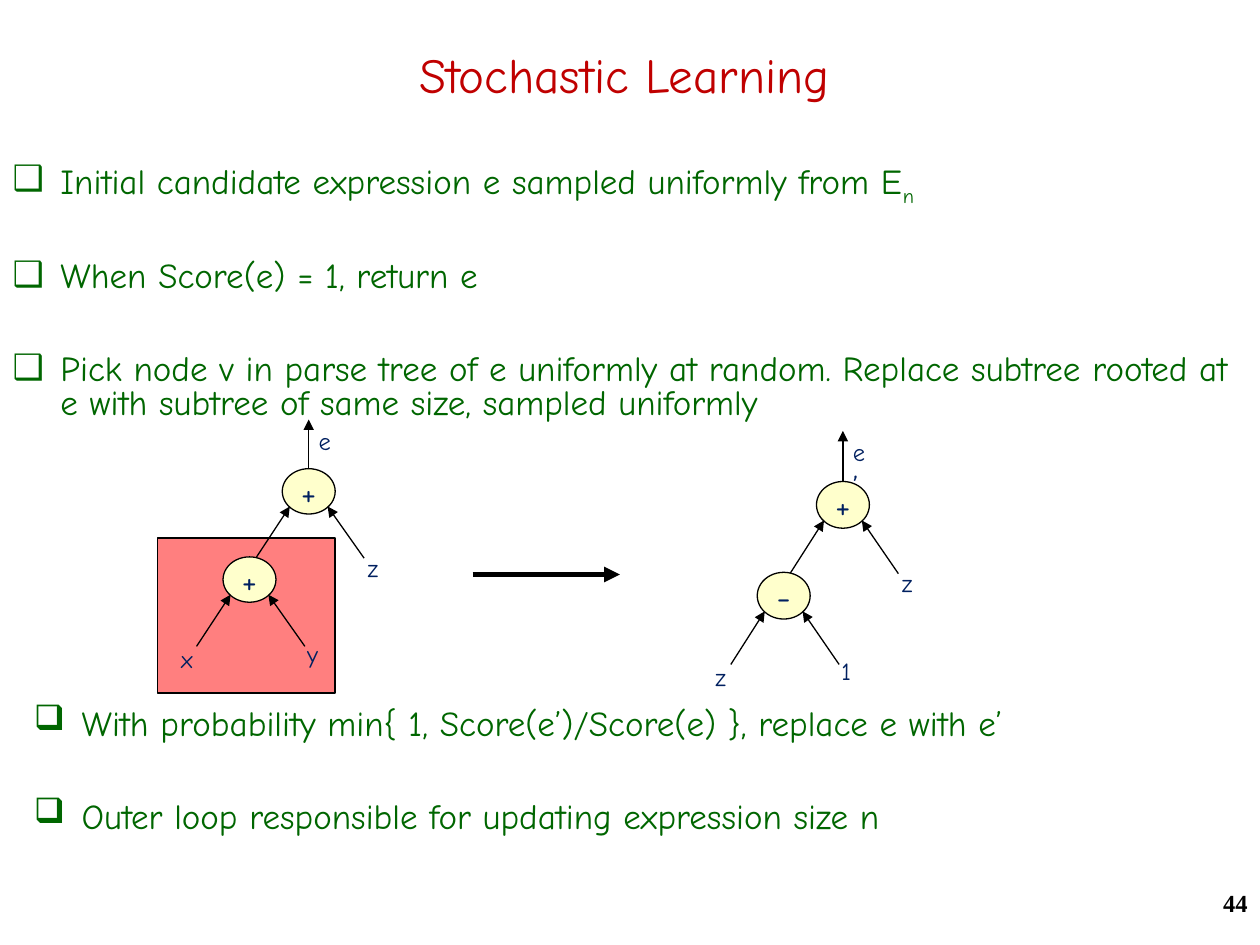
import pptx
import pptx.util
import pptx.dml.color
import pptx.enum.shapes
import pptx.enum.text
import pptx.oxml
import pptx.oxml.ns
import lxml.etree

Inches = pptx.util.Inches
Pt = pptx.util.Pt
SHAPE = pptx.enum.shapes.MSO_SHAPE
ALIGN = pptx.enum.text.PP_ALIGN
ANCHOR = pptx.enum.text.MSO_ANCHOR
FONT = "Comic Neue"
GREEN, NAVY, RED, BLACK = "006600", "002060", "C00000", "000000"


def rgb(value):
    """Return the colour for a hex string."""
    return pptx.dml.color.RGBColor.from_string(value)


def sub(parent, tag, **attrs):
    """Append a DrawingML child element and return it."""
    return lxml.etree.SubElement(parent, pptx.oxml.ns.qn(tag), attrs)


def add_run(p, text, size, color, font=FONT):
    """Add one formatted run to a paragraph."""
    r = p.add_run()
    r.text = text
    r.font.size = Pt(size)
    r.font.name = font
    r.font.color.rgb = rgb(color)
    return r


def place(sp, left, top, width, height):
    """Move and size a shape."""
    sp.left, sp.top = Inches(left), Inches(top)
    sp.width, sp.height = Inches(width), Inches(height)


def add_text(shapes, left, top, width, height):
    """Add a wrapping text box and return it."""
    sp = shapes.add_textbox(Inches(left), Inches(top), Inches(width), Inches(height))
    sp.text_frame.word_wrap = True
    return sp


def add_arrow(shapes, x1, y1, x2, y2, weight=0.75):
    """Add a black line with an arrowhead at its end."""
    line = shapes.add_connector(pptx.enum.shapes.MSO_CONNECTOR.STRAIGHT,
                                Inches(x1), Inches(y1), Inches(x2), Inches(y2))
    line.line.color.rgb = rgb(BLACK)
    line.line.width = Pt(weight)
    sub(line.line._get_or_add_ln(), "a:tailEnd", type="triangle")
    sub(line._element.spPr, "a:effectLst")


def add_outlined(shapes, kind, left, top, width, height, fill):
    """Add a filled shape with a thin black outline."""
    sp = shapes.add_shape(kind, Inches(left), Inches(top), Inches(width), Inches(height))
    sp.shadow.inherit = False
    sp.fill.solid()
    sp.fill.fore_color.rgb = rgb(fill)
    sp.line.color.rgb = rgb(BLACK)
    sp.line.width = Pt(0.75)
    return sp


def add_bullets(tf, items, first_gap):
    """Fill a text frame with bulleted items, each a list of (text, is_subscript)."""
    tf.word_wrap = True
    tf.auto_size = pptx.enum.text.MSO_AUTO_SIZE.NONE
    tf.vertical_anchor = ANCHOR.TOP
    for i, item in enumerate(items):
        p = tf.paragraphs[0] if i == 0 else tf.add_paragraph()
        p.line_spacing = 0.8
        p.space_before = Pt(34 if i else first_gap)
        pPr = p._p.get_or_add_pPr()
        pPr.set("marL", str(Inches(0.38)))
        pPr.set("indent", str(-Inches(0.38)))
        sub(sub(pPr, "a:buClr"), "a:srgbClr", val=GREEN)
        sub(pPr, "a:buChar", char="❑")
        for text, is_subscript in item:
            r = add_run(p, text, 20, GREEN)
            if is_subscript:
                r.font._element.set("baseline", "-25000")


def add_title(s):
    """Place and fill the title."""
    sp = s.shapes.title
    place(sp, 0.67, 0.25, 8.57, 0.67)
    sp.text_frame.vertical_anchor = ANCHOR.MIDDLE
    p = sp.text_frame.paragraphs[0]
    p.alignment = ALIGN.CENTER
    add_run(p, "Stochastic Learning", 28, RED)


def add_tree(s, left, top, stretch, operators, leaves, output, highlight=False):
    """Draw a two-operator parse tree from its top left corner."""
    shapes = s.shapes.add_group_shape().shapes

    def at(x, y):
        return left + x, top + y * stretch

    if highlight:
        sp = add_outlined(shapes, SHAPE.RECTANGLE, *at(-0.09, 0.94), 1.41, 1.23, "FF0000")
        color = sp.fill._xPr.find(".//" + pptx.oxml.ns.qn("a:srgbClr"))
        sub(color, "a:alpha", val="50000")
    for operator, (x, y) in zip(operators, [(0.9, 0.39), (0.43, 1.09)]):
        sp = add_outlined(shapes, SHAPE.OVAL, *at(x, y), 0.42, 0.36 * stretch, "FFFFCC")
        tf = sp.text_frame
        tf.word_wrap = False
        tf.vertical_anchor = ANCHOR.MIDDLE
        p = tf.paragraphs[0]
        p.alignment = ALIGN.CENTER
        add_run(p, operator, 20, NAVY)
        for start, end in [(-0.21, 0.06), (0.65, 0.36)]:
            add_arrow(shapes, *at(x + start, y + 0.71), *at(x + end, y + 0.3))
    add_arrow(shapes, *at(1.11, 0.39), *at(1.11, 0))
    for leaf, spot in zip(leaves, [(0, 1.73), (1, 1.69), (1.48, 1.01)]):
        sp = add_text(shapes, *at(*spot), 0.26, 0.29)
        add_run(sp.text_frame.paragraphs[0], leaf, 14, NAVY)
    sp = add_text(shapes, *at(1.09, 0), 0.3, 0.29)
    for text, size in output:
        add_run(sp.text_frame.paragraphs[0], text, size, NAVY)


def add_page_number(s):
    """Write the page number in the lower right corner."""
    p = add_text(s.shapes, 7.92, 7, 2.08, 0.5).text_frame.paragraphs[0]
    p.alignment = ALIGN.RIGHT
    add_run(p, "44", 14, BLACK, "Times New Roman").font.bold = True


def main():
    """Build and save the slide."""
    prs = pptx.Presentation()
    prs.slide_width, prs.slide_height = Inches(10), Inches(7.5)
    s = prs.slides.add_slide(prs.slide_layouts[1])
    add_title(s)
    body = s.placeholders[1]
    place(body, 0, 1.25, 10, 2.08)
    add_bullets(body.text_frame, [
        [("Initial candidate expression e sampled uniformly from E", False), ("n", True)],
        [("When Score(e) = 1, return e", False)],
        [("Pick node v in parse tree of e uniformly at random. Replace subtree "
          "rooted at e with subtree of same size, sampled uniformly", False)],
    ], 3)
    add_page_number(s)
    add_tree(s, 1.34, 3.33, 1, "++", "xyz", [("e", 14)], highlight=True)
    add_tree(s, 5.58, 3.42, 1.03, "+-", "z1z", [("e", 14), ("’", 18)])
    add_arrow(s.shapes, 3.75, 4.56, 4.92, 4.56, 3)
    steps = add_text(s.shapes, 0.17, 5.58, 9.83, 1.75)
    add_bullets(steps.text_frame, [
        [("With probability min{ 1, Score(e’)/Score(e) }, replace e with e’", False)],
        [("Outer loop responsible for updating expression size n", False)],
    ], 32)


    prs.save("out.pptx")


if __name__ == "__main__":
    main()
